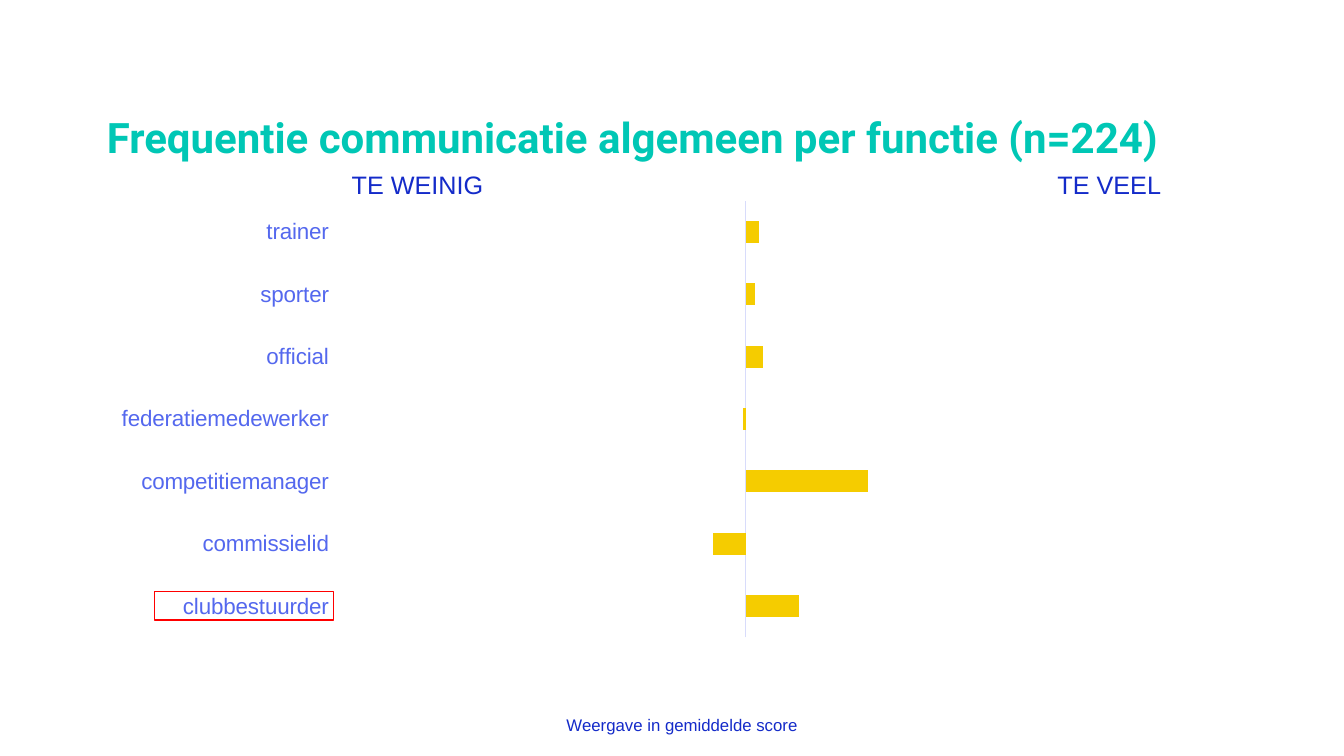
"""Build a slide with a bar chart of communication frequency per role."""
from dataclasses import dataclass

from lxml.etree import SubElement
from pptx import Presentation
from pptx.chart.data import CategoryChartData
from pptx.dml.color import RGBColor as RGB
from pptx.enum.chart import XL_CHART_TYPE as ChartType
from pptx.enum.chart import XL_TICK_LABEL_POSITION as LabelPos
from pptx.enum.chart import XL_TICK_MARK as Tick
from pptx.enum.text import MSO_ANCHOR as Anchor
from pptx.enum.text import MSO_AUTO_SIZE as AutoSize
from pptx.enum.text import PP_ALIGN as Align
from pptx.oxml.ns import qn
from pptx.util import Inches, Pt


@dataclass(frozen=True)
class Theme:
    title_font: str = "Roboto"
    body_font: str = "Arial"
    teal: RGB = RGB(0x00, 0xC7, 0xB5)
    navy: RGB = RGB(0x14, 0x2B, 0xC9)
    blue: RGB = RGB(0x54, 0x68, 0xEE)
    pale: RGB = RGB(0xD8, 0xDC, 0xFB)
    yellow: RGB = RGB(0xF5, 0xCC, 0x00)
    red: RGB = RGB(0xFF, 0x00, 0x00)
    title_size: int = 30
    heading_size: int = 18
    category_size: int = 16
    note_size: int = 12
    chart_size: int = 10


@dataclass(frozen=True)
class Box:
    left: float
    top: float
    width: float
    height: float

    def lengths(self):
        return [Inches(v) for v in (self.left, self.top, self.width, self.height)]


@dataclass(frozen=True)
class Label:
    text: str
    box: Box
    size: int


THEME = Theme()
TITLE = "Frequentie communicatie algemeen per functie (n=224)"
TITLE_BOX = Box(0.96, 0.58, 10.67, 1.08)
CHART_BOX = Box(0.96, 1.84, 10.67, 4.79)
HIGHLIGHT_BOX = Box(1.53, 5.87, 1.78, 0.28)
PLOT_LAYOUT = {"x": 0.225, "y": 0.032, "w": 0.757, "h": 0.904}
AXIS_LIMIT = 333
SCORES = {
    "clubbestuurder": 43,
    "commissielid": -27,
    "competitiemanager": 100,
    "federatiemedewerker": -2,
    "official": 14,
    "sporter": 7,
    "trainer": 11,
}
LABELS = [
    Label("TE VEEL", Box(10.39, 1.63, 1.24, 0.4), THEME.heading_size),
    Label("TE WEINIG", Box(3.39, 1.63, 1.52, 0.4), THEME.heading_size),
    Label("Weergave in gemiddelde score", Box(5.52, 7.04, 2.51, 0.3), THEME.note_size),
]


def style_font(font, name: str, size: int, color: RGB, bold: bool = False) -> None:
    font.name, font.size, font.bold = name, Pt(size), bold
    font.color.rgb = color


def add_title(slide) -> None:
    sp = slide.shapes.title
    sp.left, sp.top, sp.width, sp.height = TITLE_BOX.lengths()
    tf = sp.text_frame
    tf.text = TITLE
    tf.word_wrap = True
    tf.auto_size = AutoSize.NONE
    tf.vertical_anchor = Anchor.BOTTOM
    p = tf.paragraphs[0]
    p.alignment = Align.LEFT
    p.line_spacing = 0.9
    style_font(p.font, THEME.title_font, THEME.title_size, THEME.teal, True)


def set_plot_layout(chart) -> None:
    area = chart.element.find(".//" + qn("c:plotArea"))
    for old in area.findall(qn("c:layout")):
        area.remove(old)
    layout = SubElement(area, qn("c:layout"))
    area.insert(0, layout)
    manual = SubElement(layout, qn("c:manualLayout"))
    settings = {"layoutTarget": "inner", "xMode": "edge", "yMode": "edge", **PLOT_LAYOUT}
    for tag, value in settings.items():
        SubElement(manual, qn(f"c:{tag}")).set("val", str(value))


def add_score_chart(slide) -> None:
    data = CategoryChartData()
    data.categories = list(SCORES)
    data.add_series("Series 1", list(SCORES.values()))
    frame = slide.shapes.add_chart(ChartType.BAR_CLUSTERED, *CHART_BOX.lengths(), data)
    chart = frame.chart
    chart.has_title = False
    chart.has_legend = False
    style_font(chart.font, THEME.body_font, THEME.chart_size, THEME.navy)

    plot = chart.plots[0]
    plot.gap_width = 182
    plot.vary_by_categories = False
    series = plot.series[0]
    series.invert_if_negative = False
    series.format.fill.solid()
    series.format.fill.fore_color.rgb = THEME.yellow

    roles = chart.category_axis
    roles.tick_label_position = LabelPos.LOW
    roles.major_tick_mark = roles.minor_tick_mark = Tick.NONE
    roles.has_major_gridlines = False
    roles.format.line.color.rgb = THEME.pale
    roles.format.line.width = Pt(0.75)
    style_font(roles.tick_labels.font, THEME.body_font, THEME.category_size, THEME.blue)

    values = chart.value_axis
    values.minimum_scale, values.maximum_scale = -AXIS_LIMIT, AXIS_LIMIT
    values.has_major_gridlines = False
    values.visible = False
    set_plot_layout(chart)


def add_highlight(slide) -> None:
    sp = slide.shapes.add_shape(1, *HIGHLIGHT_BOX.lengths())
    sp.shadow.inherit = False
    sp.fill.background()
    sp.line.color.rgb = THEME.red
    sp.line.width = Pt(1)


def add_label(slide, label: Label) -> None:
    tf = slide.shapes.add_textbox(*label.box.lengths()).text_frame
    tf.text = label.text
    tf.word_wrap = False
    tf.auto_size = AutoSize.SHAPE_TO_FIT_TEXT
    style_font(tf.paragraphs[0].font, THEME.body_font, label.size, THEME.navy)


def main() -> None:
    prs = Presentation()
    prs.slide_width, prs.slide_height = Inches(13.33), Inches(7.5)
    slide = prs.slides.add_slide(prs.slide_layouts.get_by_name("Title Only"))
    add_title(slide)
    add_score_chart(slide)
    add_highlight(slide)
    for label in LABELS:
        add_label(slide, label)
    prs.save("out.pptx")


if __name__ == "__main__":
    main()
